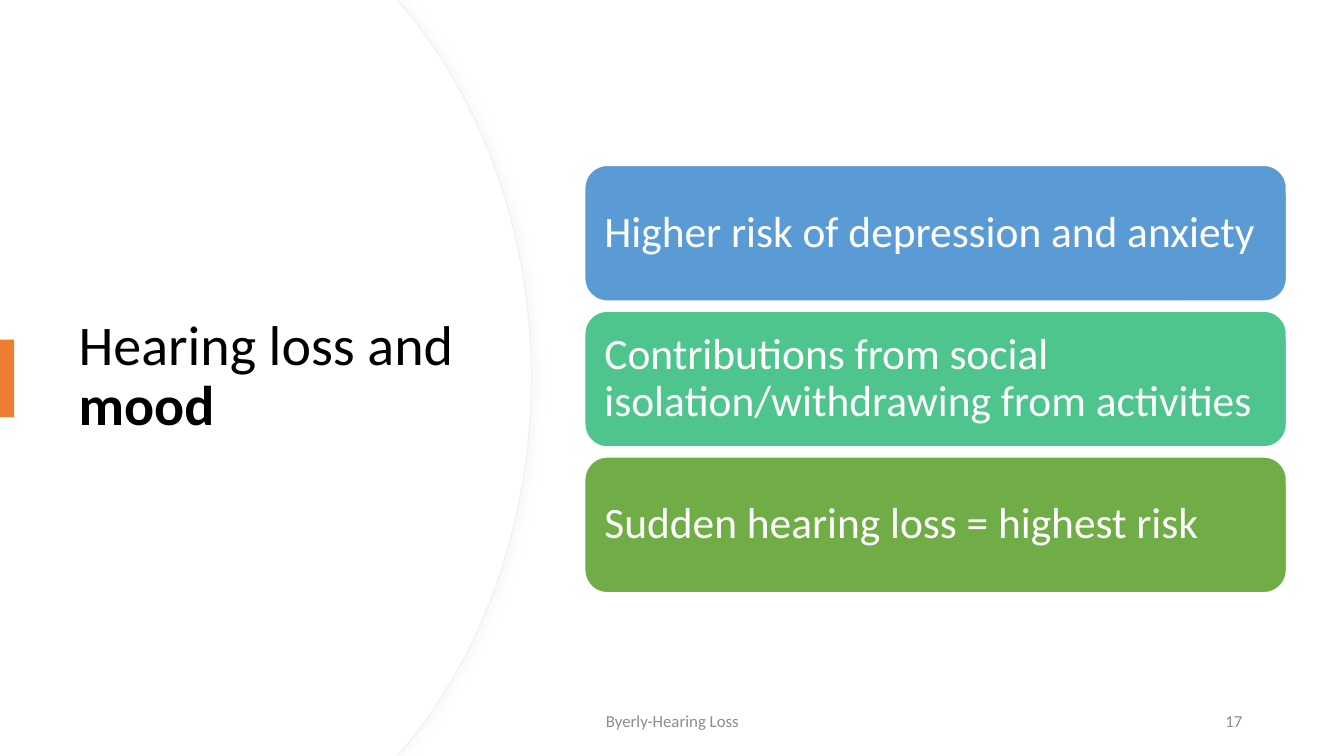
from lxml import etree
from pptx import Presentation
from pptx.dml.color import RGBColor
from pptx.enum.shapes import MSO_SHAPE
from pptx.enum.text import MSO_ANCHOR, PP_ALIGN
from pptx.oxml.ns import qn
from pptx.util import Inches, Pt

RECT, ROUNDED = MSO_SHAPE.RECTANGLE, MSO_SHAPE.ROUNDED_RECTANGLE
MIDDLE = MSO_ANCHOR.MIDDLE
LEFT, CENTER, RIGHT = PP_ALIGN.LEFT, PP_ALIGN.CENTER, PP_ALIGN.RIGHT

FONT = "Calibri"
COLORS = {
    "white": "FFFFFF", "black": "000000", "grey": "8C8C8C", "edge": "EFEFEF",
    "shadow": "D9D9D9", "orange": "ED7D31", "blue": "5B9BD5",
    "teal": "4DC58D", "green": "70AD47",
}
POINTS = [
    ("Higher risk of depression and anxiety", "blue"),
    ("Contributions from social isolation/withdrawing from activities", "teal"),
    ("Sudden hearing loss = highest risk", "green"),
]


def rgb(name):
    return RGBColor.from_string(COLORS[name])


def add_run(p, text, size, color, bold=False):
    r = p.add_run()
    r.text = text
    r.font.name, r.font.size, r.font.bold = FONT, Pt(size), bold
    r.font.color.rgb = rgb(color)


def write(tf, text, size=12, color="grey", align=LEFT, spacing=1.0):
    tf.word_wrap = True
    tf.vertical_anchor = MIDDLE
    p = tf.paragraphs[0]
    p.alignment, p.line_spacing = align, spacing
    add_run(p, text, size, color)


def bend(segment, controls):
    """Turn a straight freeform segment into a cubic curve."""
    segment.tag = qn("a:cubicBezTo")
    for i, (x, y) in enumerate(controls):
        segment.insert(i, etree.Element(
            qn("a:pt"), x=str(Inches(x)), y=str(Inches(y))))


def add_soft_shadow(sp):
    effects = etree.SubElement(sp._element.spPr, qn("a:effectLst"))
    shadow = etree.SubElement(effects, qn("a:outerShdw"), blurRad=str(Pt(7)),
                              dist=str(Pt(3)), dir="0", algn="l",
                              rotWithShape="0")
    color = etree.SubElement(shadow, qn("a:srgbClr"), val=COLORS["shadow"])
    etree.SubElement(color, qn("a:alpha"), val="20000")


def add_curved_panel(s, width, height, edged):
    """Draw a white panel whose right side bulges out to the given width."""
    corner, shoulder = width - 1.33, width - 1.26
    outline = [(corner, 0), (shoulder, 0.08), (width, height / 2),
               (shoulder, height - 0.08), (corner, height), (0, height)]
    builder = s.shapes.build_freeform(0, 0)
    builder.add_line_segments([(Inches(x), Inches(y)) for x, y in outline])
    sp = builder.convert_to_shape()
    segments = list(sp._element.iter(qn("a:lnTo")))
    upper = [(width - 0.48, 1.02), (width, 2.32)]
    bend(segments[2], upper)
    bend(segments[3], [(x, height - y) for x, y in reversed(upper)])
    sp.fill.solid()
    sp.fill.fore_color.rgb = rgb("white")
    if edged:
        sp.line.color.rgb = rgb("edge")
        sp.line.width = Pt(0.75)
        add_soft_shadow(sp)
    else:
        sp.line.fill.background()
        sp.shadow.inherit = False


def add_box(s, kind, x, y, w, h, fill):
    sp = s.shapes.add_shape(kind, Inches(x), Inches(y), Inches(w), Inches(h))
    sp.shadow.inherit = False
    sp.fill.solid()
    sp.fill.fore_color.rgb = rgb(fill)
    sp.line.fill.background()
    return sp


def add_title_panel(s, x, y, w, h):
    add_curved_panel(s, w, h, edged=True)
    add_curved_panel(s, w - 0.01, h, edged=False)
    title = s.shapes.title
    s.shapes._spTree.append(title._element)  # bring the title above the panel
    title.left, title.top = Inches(x + 0.68), Inches(y + 1.27)
    title.width, title.height = Inches(3.94), Inches(4.95)
    tf = title.text_frame
    write(tf, "Hearing loss and ", 40, "black", spacing=0.9)
    add_run(tf.paragraphs[0], "mood", 40, "black", bold=True)
    add_box(s, RECT, x, y + 3.37, 0.14, 0.77, "orange")


def add_points(s, x, y, w, h, gap=0.1):
    """Stack the points as equal cards that fill the box."""
    card_h = (h - gap * (len(POINTS) - 1)) / len(POINTS)
    for i, (text, fill) in enumerate(POINTS):
        card = add_box(s, ROUNDED, x, y + i * (card_h + gap), w, card_h, fill)
        card.line.color.rgb = rgb("white")
        card.line.width = Pt(1)
        tf = card.text_frame
        tf.margin_left = tf.margin_right = Inches(0.13)
        tf.margin_top = tf.margin_bottom = Inches(0.13)
        write(tf, text, 31, "white", spacing=0.9)


def add_footer(s, x, y, w, h):
    number_w = 3
    for text, left, width, align in [
        ("Byerly-Hearing Loss", x, 4.5, CENTER),
        ("17", x + w - number_w, number_w, RIGHT),
    ]:
        tb = s.shapes.add_textbox(Inches(left), Inches(y), Inches(width), Inches(h))
        write(tb.text_frame, text, align=align)


def main():
    prs = Presentation()
    prs.slide_width, prs.slide_height = Inches(13.33), Inches(7.5)
    s = prs.slides.add_slide(prs.slide_layouts[5])
    add_title_panel(s, 0, 0, 5.27, 7.5)
    add_points(s, 5.8, 1.64, 6.96, 4.24)
    add_footer(s, 4.42, 6.95, 8, 0.4)
    prs.save("out.pptx")


if __name__ == "__main__":
    main()
